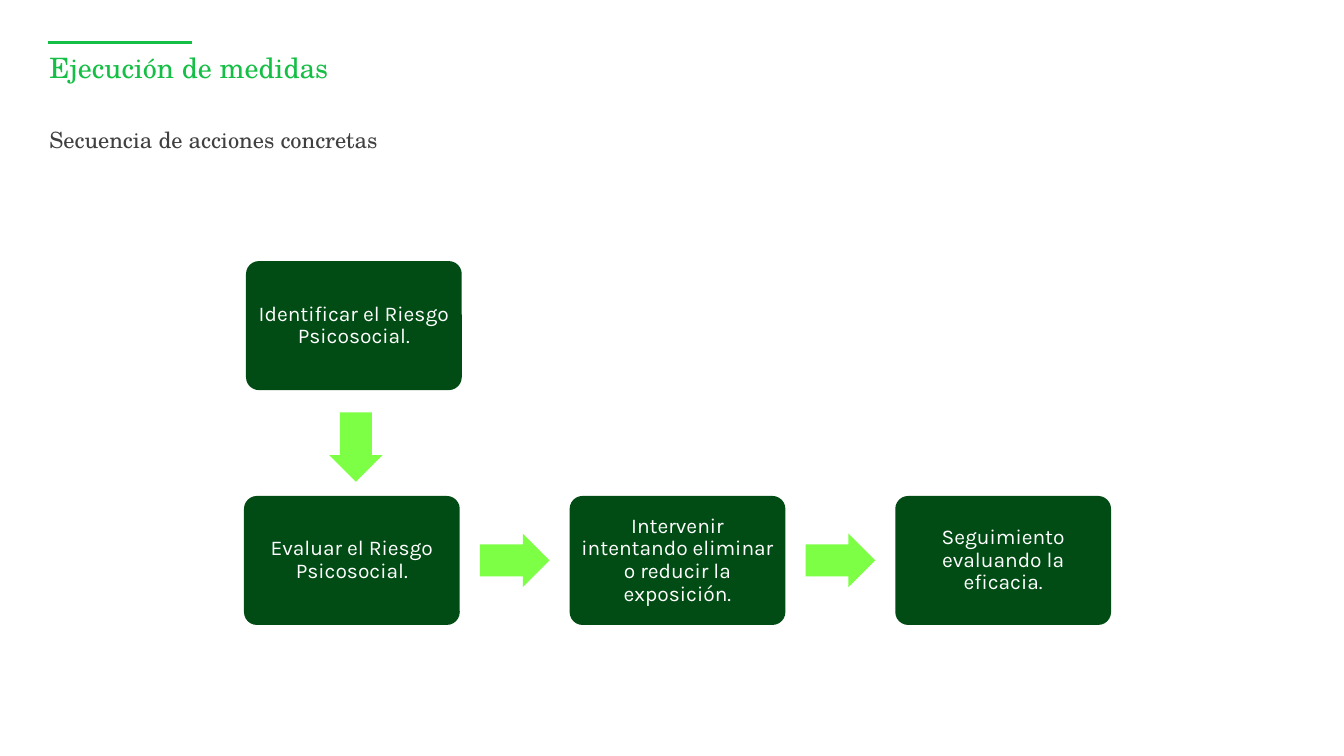
from pptx import Presentation
from pptx.dml.color import RGBColor
from pptx.enum.shapes import MSO_CONNECTOR, MSO_SHAPE
from pptx.enum.text import MSO_ANCHOR, PP_ALIGN
from pptx.oxml.ns import qn
from pptx.util import Inches, Pt
from lxml.etree import SubElement

COLORS = {"accent": "15BF45", "ink": "404040", "step": "004C14",
          "arrow": "7CFF44", "white": "FFFFFF"}
SERIF, SANS = "TeX Gyre Schola", "Karla"


def rgb(name):
    return RGBColor.from_string(COLORS[name])


def write(shape, text, *, font, size, color, align=PP_ALIGN.LEFT,
          anchor=MSO_ANCHOR.TOP, inset=0):
    frame = shape.text_frame
    frame.word_wrap = True
    frame.vertical_anchor = anchor
    frame.margin_left = frame.margin_right = Inches(inset)
    frame.margin_top = frame.margin_bottom = Inches(inset)
    paragraph = frame.paragraphs[0]
    paragraph.alignment = align
    paragraph.line_spacing = 0.9
    run = paragraph.add_run()
    run.text = text
    run.font.name = font
    run.font.size = Pt(size)
    run.font.color.rgb = rgb(color)


class FlowSlide:
    """Draws on one slide; steps and arrows sit on a grid of columns and rows."""
    left, top = 2.42, 2.59
    column_pitch, row_pitch = 3.23, 2.33
    step_width, step_height = 2.14, 1.28
    arrow_length, arrow_breadth = 0.69, 0.53

    def __init__(self, slide):
        self.slide = slide

    def rule(self, x, y, length):
        rule = self.slide.shapes.add_connector(
            MSO_CONNECTOR.STRAIGHT, Inches(x), Inches(y), Inches(x + length), Inches(y))
        rule.line.color.rgb = rgb("accent")
        rule.line.width = Pt(1.75)
        SubElement(rule._element.spPr, qn("a:effectLst"))

    def heading(self, text, y, height, **style):
        box = self.slide.shapes.add_textbox(
            Inches(0.49), Inches(y), Inches(10.79), Inches(height))
        write(box, text, font=SERIF, **style)

    def block(self, preset, center_x, center_y, width, height, color, adjustments):
        block = self.slide.shapes.add_shape(
            preset, Inches(center_x - width / 2), Inches(center_y - height / 2),
            Inches(width), Inches(height))
        for index, value in enumerate(adjustments):
            block.adjustments[index] = value
        block.shadow.inherit = False
        block.fill.solid()
        block.fill.fore_color.rgb = rgb(color)
        block.line.fill.background()
        return block

    def center(self, column, row):
        return (self.left + self.step_width / 2 + column * self.column_pitch,
                self.top + self.step_height / 2 + row * self.row_pitch)

    def step(self, text, column, row, shift=0):
        x, y = self.center(column, row)
        step = self.block(MSO_SHAPE.ROUNDED_RECTANGLE, x + shift, y,
                          self.step_width, self.step_height, "step", [0.1])
        write(step, text, font=SANS, size=15, color="white", inset=0.07,
              align=PP_ALIGN.CENTER, anchor=MSO_ANCHOR.MIDDLE)

    def arrow_right(self, column, row):
        x, y = self.center(column + 0.5, row)
        self.block(MSO_SHAPE.RIGHT_ARROW, x, y, self.arrow_length,
                   self.arrow_breadth, "arrow", [0.6, 0.5])

    def arrow_down(self, column, row, shift_x=0, shift_y=0):
        x, y = self.center(column, row + 0.5)
        self.block(MSO_SHAPE.DOWN_ARROW, x + shift_x, y + shift_y,
                   self.arrow_breadth, self.arrow_length, "arrow", [0.6, 0.5])


def main():
    deck = Presentation()
    deck.slide_width, deck.slide_height = Inches(13.33), Inches(7.5)
    flow = FlowSlide(deck.slides.add_slide(deck.slide_layouts[6]))

    # Headings
    flow.rule(0.48, 0.42, 1.42)
    flow.heading("Ejecución de medidas", 0.54, 0.57, size=20, color="accent")
    flow.heading("Secuencia de acciones concretas", 1.28, 0.39, size=16, color="ink")

    # First step, above the sequence
    flow.step("Identificar el Riesgo Psicosocial.", 0, 0, shift=0.02)
    flow.arrow_down(0, 0, shift_x=0.04, shift_y=0.04)

    # Sequence from left to right
    sequence = ["Evaluar el Riesgo Psicosocial.",
                "Intervenir intentando eliminar o reducir la exposición.",
                "Seguimiento evaluando la eficacia."]
    for column, action in enumerate(sequence):
        flow.step(action, column, 1)
        if column < len(sequence) - 1:
            flow.arrow_right(column, 1)

    deck.save("out.pptx")


if __name__ == "__main__":
    main()
